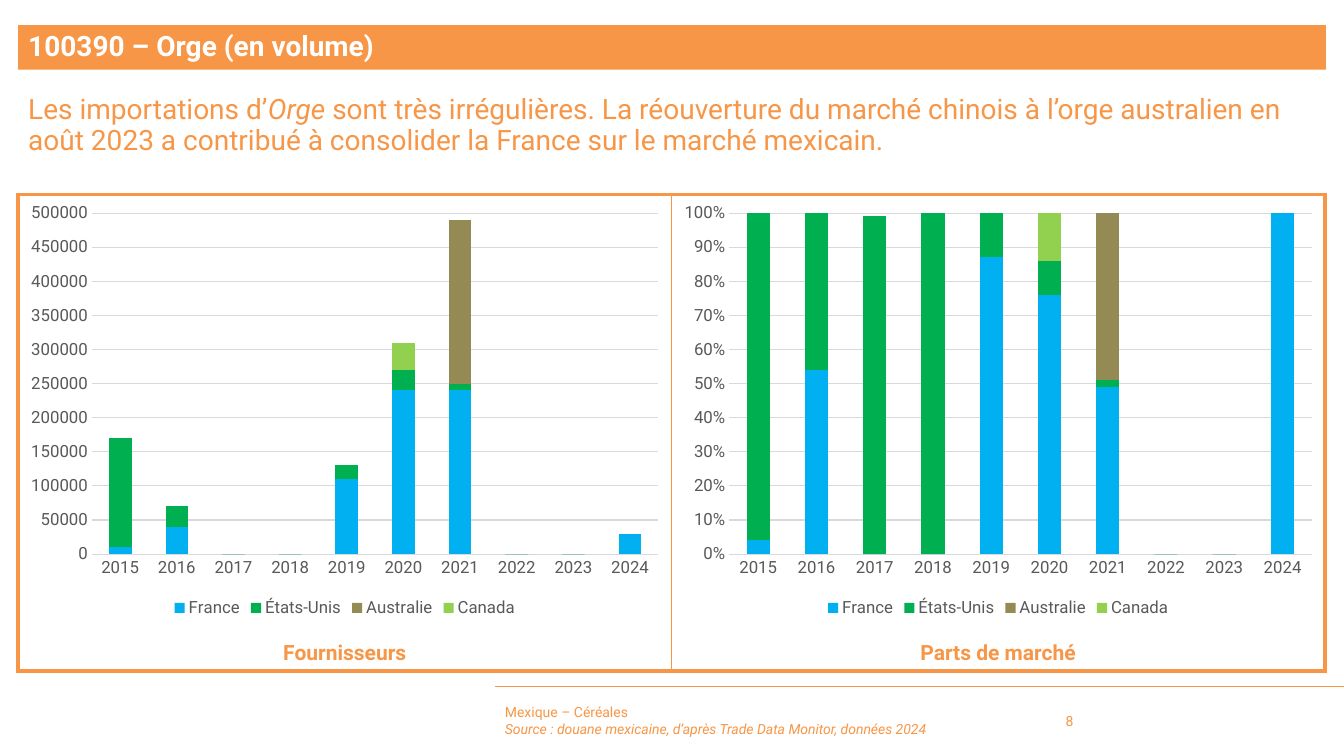
from dataclasses import dataclass

from lxml import etree
from pptx import Presentation
from pptx.chart.data import CategoryChartData
from pptx.dml.color import RGBColor
from pptx.enum.chart import XL_CHART_TYPE, XL_LEGEND_POSITION, XL_TICK_MARK
from pptx.enum.shapes import MSO_CONNECTOR
from pptx.enum.text import MSO_ANCHOR, MSO_AUTO_SIZE, PP_ALIGN
from pptx.oxml.ns import qn
from pptx.util import Inches, Pt

STACKED = XL_CHART_TYPE.COLUMN_STACKED
BOTTOM = XL_LEGEND_POSITION.BOTTOM
NO_TICK = XL_TICK_MARK.NONE
STRAIGHT = MSO_CONNECTOR.STRAIGHT
TOP, MIDDLE = MSO_ANCHOR.TOP, MSO_ANCHOR.MIDDLE
NO_AUTOFIT = MSO_AUTO_SIZE.NONE
LEFT, CENTER = PP_ALIGN.LEFT, PP_ALIGN.CENTER


@dataclass(frozen=True)
class Theme:
    font: str = "Roboto"
    accent: str = "F79646"
    white: str = "FFFFFF"
    label: str = "595959"
    grid: str = "D9D9D9"
    heading_size: float = 20
    caption_size: float = 15
    chart_size: float = 12
    footer_size: float = 10


THEME = Theme()
YEARS = [str(year) for year in range(2015, 2025)]
SUPPLIER_COLORS = {
    "France": "00B0F0",
    "États-Unis": "00B050",
    "Australie": "948A54",
    "Canada": "92D050",
}
VOLUMES = [
    [10000, 40000, 0, 0, 110000, 240000, 240000, 0, 0, 30000],
    [160000, 30000, 0, 0, 20000, 30000, 10000, 0, 0, 0],
    [0, 0, 0, 0, 0, 0, 240000, 0, 0, 0],
    [0, 0, 0, 0, 0, 40000, 0, 0, 0, 0],
]
SHARES = [
    [0.04, 0.54, 0, 0, 0.87, 0.76, 0.49, 0, 0, 1],
    [0.96, 0.46, 0.99, 1, 0.13, 0.1, 0.02, 0, 0, 0],
    [0, 0, 0, 0, 0, 0, 0.49, 0, 0, 0],
    [0, 0, 0, 0, 0, 0.14, 0, 0, 0, 0],
]


def rgb(color):
    return RGBColor.from_string(color)


def style_font(font, size, color, bold=False, italic=False):
    font.name = THEME.font
    font.size = Pt(size)
    font.color.rgb = rgb(color)
    font.bold = bold
    font.italic = italic


def place(shape, box):
    shape.left, shape.top, shape.width, shape.height = map(Inches, box)


def prepare_frame(shape, anchor):
    frame = shape.text_frame
    frame.word_wrap = True
    frame.auto_size = NO_AUTOFIT
    frame.vertical_anchor = anchor
    return frame


def format_heading(paragraph):
    paragraph.alignment = LEFT
    paragraph.line_spacing = 0.9
    paragraph.space_before = Pt(0)


def add_text(slide, box, lines, size, anchor=TOP, alignment=LEFT, bold=False):
    frame = prepare_frame(slide.shapes.add_textbox(*map(Inches, box)), anchor)
    for index, (text, italic) in enumerate(lines):
        paragraph = frame.add_paragraph() if index else frame.paragraphs[0]
        paragraph.text = text
        paragraph.alignment = alignment
        style_font(paragraph.runs[0].font, size, THEME.accent, bold, italic)


def fill_title(slide, box, text):
    title = slide.shapes.title
    place(title, box)
    title.fill.solid()
    title.fill.fore_color.rgb = rgb(THEME.accent)
    paragraph = prepare_frame(title, MIDDLE).paragraphs[0]
    paragraph.text = text
    format_heading(paragraph)
    style_font(paragraph.runs[0].font, THEME.heading_size, THEME.white, bold=True)


def fill_message(slide, box, pieces):
    body = slide.placeholders[1]
    place(body, box)
    paragraph = prepare_frame(body, TOP).paragraphs[0]
    format_heading(paragraph)
    properties = paragraph._p.get_or_add_pPr()
    properties.set("marL", "0")
    properties.set("indent", "0")
    etree.SubElement(properties, qn("a:buNone"))
    for text, italic in pieces:
        run = paragraph.add_run()
        run.text = text
        style_font(run.font, THEME.heading_size, THEME.accent, italic=italic)


def set_borders(cell, widths):
    properties = cell._tc.get_or_add_tcPr()
    for index, (side, width) in enumerate(widths.items()):
        line = etree.Element(qn(f"a:ln{side}"), w=str(Pt(width)))
        fill = etree.SubElement(line, qn("a:solidFill"))
        etree.SubElement(fill, qn("a:srgbClr"), val=THEME.accent)
        properties.insert(index, line)


def add_frame(slide, box):
    table = slide.shapes.add_table(1, 2, *map(Inches, box)).table
    table.first_row = False
    table.horz_banding = False
    for column, (left, right) in enumerate([(3, 1), (1, 3)]):
        cell = table.cell(0, column)
        cell.fill.background()
        set_borders(cell, {"L": left, "R": right, "T": 3, "B": 3})


def add_supplier_chart(slide, box, rows, maximum, number_format):
    data = CategoryChartData(number_format=number_format)
    data.categories = YEARS
    for name, values in zip(SUPPLIER_COLORS, rows):
        data.add_series(name, values)
    chart = slide.shapes.add_chart(STACKED, *map(Inches, box), data).chart
    chart.has_title = False
    style_font(chart.font, THEME.chart_size, THEME.label)
    chart.has_legend = True
    chart.legend.position = BOTTOM
    chart.legend.include_in_layout = False
    style_font(chart.legend.font, THEME.chart_size, THEME.label)

    plot = chart.plots[0]
    plot.vary_by_categories = False
    plot.gap_width = 150
    plot.overlap = 100
    for series, color in zip(plot.series, SUPPLIER_COLORS.values()):
        series.format.fill.solid()
        series.format.fill.fore_color.rgb = rgb(color)

    category_axis, value_axis = chart.category_axis, chart.value_axis
    for axis in (category_axis, value_axis):
        axis.major_tick_mark = axis.minor_tick_mark = NO_TICK
        style_font(axis.tick_labels.font, THEME.chart_size, THEME.label)
    value_axis.minimum_scale = 0
    value_axis.maximum_scale = maximum
    value_axis.major_unit = maximum / 10
    value_axis.tick_labels.number_format = number_format
    value_axis.tick_labels.number_format_is_linked = False
    value_axis.format.line.fill.background()
    for line in (category_axis.format.line, value_axis.major_gridlines.format.line):
        line.color.rgb = rgb(THEME.grid)
        line.width = Pt(0.75)


def add_panel(slide, box, caption, rows, maximum, number_format):
    left, top, width, height = box
    add_supplier_chart(slide, (left, top, width, height - 0.49), rows, maximum, number_format)
    add_text(slide, (left, top + height - 0.36, width, 0.35), [(caption, False)],
             THEME.caption_size, alignment=CENTER, bold=True)


def add_panels(slide, box):
    add_frame(slide, box)
    left, top, width, height = box
    half = width / 2
    panels = [("Fournisseurs", VOLUMES, 500000, "General"),
              ("Parts de marché", SHARES, 1, "0%")]
    for index, panel in enumerate(panels):
        add_panel(slide, (left + index * half, top, half, height), *panel)


def add_footer(slide, box):
    left, top, width, height = box
    rule = slide.shapes.add_connector(
        STRAIGHT, *map(Inches, (left + width, top, left, top)))
    rule.line.color.rgb = rgb(THEME.accent)
    rule.line.width = Pt(0.5)
    etree.SubElement(rule._element.spPr, qn("a:effectLst"))
    text_top, text_height = top + 0.14, height - 0.14
    source = [("Mexique – Céréales", False),
              ("Source : douane mexicaine, d’après Trade Data Monitor, données 2024", True)]
    add_text(slide, (left, text_top, 5.43, text_height), source, THEME.footer_size, MIDDLE)
    add_text(slide, (left + 5.56, text_top, 0.99, text_height), [("8", False)],
             THEME.footer_size, MIDDLE)


def main():
    presentation = Presentation()
    presentation.slide_width = Inches(13.33)
    presentation.slide_height = Inches(7.5)
    slide = presentation.slides.add_slide(presentation.slide_layouts[1])
    fill_title(slide, (0.18, 0.25, 12.97, 0.44), "100390 – Orge (en volume)")
    fill_message(slide, (0.18, 0.9, 12.96, 0.81), [
        ("Les importations d’", False),
        ("Orge", True),
        (" sont très irrégulières. La réouverture du marché chinois à l’orge australien "
         "en août 2023 a contribué à consolider la France sur le marché mexicain.", False),
    ])
    add_panels(slide, (0.18, 1.93, 12.96, 4.73))
    add_footer(slide, (4.91, 6.81, 8.42, 0.54))
    presentation.save("out.pptx")


if __name__ == "__main__":
    main()
